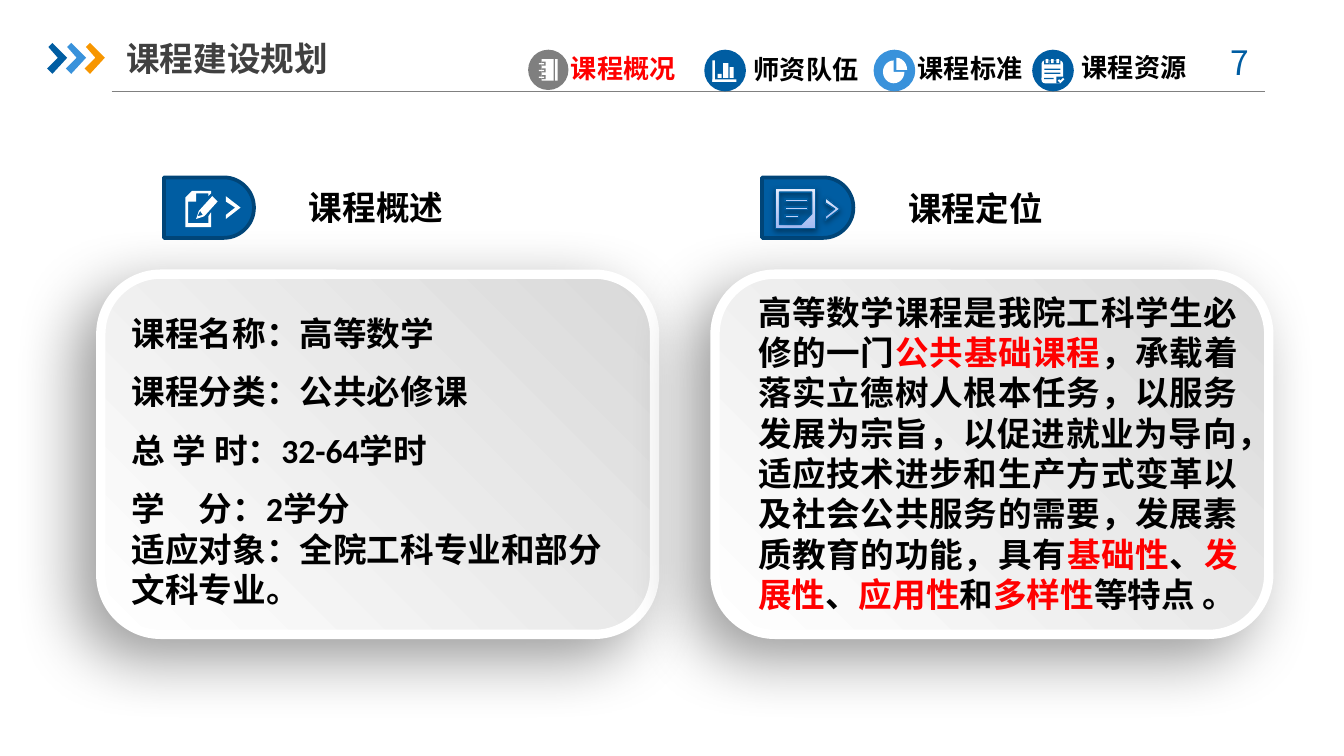
from math import cos, radians, sin

from lxml.etree import SubElement
from pptx import Presentation
from pptx.dml.color import RGBColor
from pptx.enum.lang import MSO_LANGUAGE_ID
from pptx.enum.shapes import MSO_CONNECTOR, MSO_SHAPE
from pptx.enum.text import MSO_ANCHOR, MSO_AUTO_SIZE, PP_ALIGN
from pptx.oxml.ns import qn
from pptx.util import Pt

PX = 9144  # 100 px to the inch
NAVY, BLUE, ORANGE, GREY = "005DA2", "3992DB", "F79600", "7F7F7F"
WHITE, BLACK, RED = "FFFFFF", "000000", "FF0000"
PAPER = ("D9D9D9", WHITE, 225)
ICE = ("A2BAF2", "E6ECFC", 90)
HEADING_FONT, BODY_FONT = "Noto Sans CJK SC", "Calibri"


def color(value):
    return RGBColor.from_string(value)


def px(*values):
    return [round(value * PX) for value in values]


class SlideBuilder:
    def __init__(self, slide):
        self.slide = slide
        self.shapes = slide.shapes

    def paint(self, shape, fill, line=None, width=1, shadow=None):
        """Fill is a hex string or (start, end, angle); shadow is (blur, distance, angle, opacity)."""
        shape.shadow.inherit = False
        if isinstance(fill, tuple):
            shape.fill.gradient()
            shape.fill.gradient_angle = fill[2]
            for stop, value, position in zip(shape.fill.gradient_stops, fill, (0, 1)):
                stop.color.rgb = color(value)
                stop.position = position
        else:
            shape.fill.solid()
            shape.fill.fore_color.rgb = color(fill)
        if line:
            shape.line.color.rgb = color(line)
            shape.line.width = Pt(width)
        else:
            shape.line.fill.background()
        if shadow:
            blur, distance, angle, opacity = shadow
            effects = shape._element.spPr.find(qn("a:effectLst"))
            outer = SubElement(effects, qn("a:outerShdw"), blurRad=str(Pt(blur)),
                               dist=str(Pt(distance)), dir=str(angle * 60000),
                               algn="ctr", rotWithShape="0")
            black = SubElement(outer, qn("a:srgbClr"), val=BLACK)
            SubElement(black, qn("a:alpha"), val=str(opacity * 1000))
        return shape

    def shape(self, kind, box, fill, **style):
        return self.paint(self.shapes.add_shape(kind, *px(*box)), fill, **style)

    def bars(self, boxes, fill, **style):
        for box in boxes:
            self.shape(MSO_SHAPE.RECTANGLE, box, fill, **style)

    def outline(self, contours, fill, left=0, top=0, **style):
        """Draw closed contours as one shape; an inner contour is a hole."""
        moved = [[px(left + x, top + y) for x, y in points] for points in contours]
        builder = self.shapes.build_freeform(*moved[0][0], scale=1.0)
        for index, points in enumerate(moved):
            if index:
                builder.move_to(*points[0])
            builder.add_line_segments(points[1:], close=True)
        return self.paint(builder.convert_to_shape(), fill, **style)

    def line(self, start, end, value, width):
        connector = self.shapes.add_connector(MSO_CONNECTOR.STRAIGHT, *px(*start, *end))
        connector.line.color.rgb = color(value)
        connector.line.width = Pt(width)
        SubElement(connector._element.spPr, qn("a:effectLst"))

    def format(self, paragraph, font, size, value, bold=True):
        for run in paragraph.runs:
            run.font.name, run.font.size, run.font.bold = font, Pt(size), bold
            run.font.color.rgb = color(value)
            run.font.language_id = MSO_LANGUAGE_ID.SIMPLIFIED_CHINESE

    def text(self, words, box, font, size, value, wrap=True, bold=True, align=PP_ALIGN.LEFT):
        frame = self.shapes.add_textbox(*px(*box)).text_frame
        frame.text, frame.word_wrap = words, wrap
        frame.paragraphs[0].alignment = align
        self.format(frame.paragraphs[0], font, size, value, bold)

    def placeholder(self, index, box, anchor):
        """Move a placeholder in front of what is drawn so far."""
        holder = self.slide.placeholders[index]
        holder.left, holder.top, holder.width, holder.height = px(*box)
        self.shapes._spTree.append(holder._element)
        frame = holder.text_frame
        frame.auto_size, frame.vertical_anchor = MSO_AUTO_SIZE.NONE, anchor
        return frame

    def title(self, words, box):
        frame = self.placeholder(0, box, MSO_ANCHOR.MIDDLE)
        frame.margin_left = frame.margin_right = 0
        frame.text = words
        frame.paragraphs[0].alignment = PP_ALIGN.LEFT
        self.format(frame.paragraphs[0], HEADING_FONT, 18, "404040")

    def plain(self, paragraph, tab=None):
        """Take bullet and indent away and set an optional tab stop."""
        properties = paragraph._p.get_or_add_pPr()
        properties.set("marL", "0")
        properties.set("indent", "0")
        SubElement(properties, qn("a:buNone"))
        if tab:
            tabs = SubElement(properties, qn("a:tabLst"))
            SubElement(tabs, qn("a:tab"), pos=str(tab * PX), algn="l")
        paragraph.space_before = Pt(0)

    def facts(self, lines, box):
        frame = self.placeholder(1, box, MSO_ANCHOR.MIDDLE)
        frame.text = "\n".join(lines)
        for index, paragraph in enumerate(frame.paragraphs):
            self.plain(paragraph, tab=48)
            if index < len(lines) - 1:
                paragraph.line_spacing = 1.2
                paragraph.space_before = Pt(5.4 if index else 0)
            self.format(paragraph, BODY_FONT, 18, BLACK)

    def statement(self, pieces, box):
        """Pieces alternate between plain and highlighted words."""
        frame = self.placeholder(2, box, MSO_ANCHOR.TOP)
        paragraph = frame.paragraphs[0]
        self.plain(paragraph)
        paragraph.alignment = PP_ALIGN.JUSTIFY
        for piece in pieces:
            paragraph.add_run().text = piece
        self.format(paragraph, BODY_FONT, 18, BLACK)
        for run in paragraph.runs[1::2]:
            run.font.color.rgb = color(RED)

    def tag(self, left, width):
        """A blue label with a half-round right end."""
        radius = 22.5
        center = left + width - radius
        arc = [(center + radius * cos(radians(a)), 154.5 + radius * sin(radians(a)))
               for a in range(-90, 91, 6)]
        self.outline([[(left, 132), *arc, (left, 177)]], NAVY, line="004578", width=2)

    def notebook_icon(self):
        self.bars([(403, 44, 9, 16), (413, 44, 2, 16)], WHITE)
        for top in (47, 52, 57):
            self.bars([(403, top - 1, 3, 3)], GREY)
            self.bars([(401, top, 4, 1)], WHITE)

    def chart_icon(self):
        self.bars([(530, 45, 2, 16), (530, 59, 18, 2), (534, 55, 3, 3),
                   (538, 47, 4, 11), (543, 50, 3, 8)], WHITE)

    def pie_icon(self):
        self.shape(MSO_SHAPE.PIE, (657, 45, 16, 17), WHITE)
        quarter = self.shape(MSO_SHAPE.PIE, (659, 43, 16, 18), WHITE)
        quarter.adjustments[0], quarter.adjustments[1] = 162, 0

    def notepad_icon(self):
        self.shape(MSO_SHAPE.ROUNDED_RECTANGLE, (775, 45, 16, 17), WHITE)
        for left in (778, 782, 786):
            self.bars([(left - 1, 45, 4, 3)], NAVY)
            self.bars([(left, 44, 2, 3)], WHITE)
        self.bars([(777, 51, 12, 1), (777, 54, 12, 1), (777, 58, 7, 1), (786, 57, 6, 5)], NAVY)
        self.outline([[(787, 60), (788, 59), (789, 60), (791, 58), (792, 59), (789, 62)]], WHITE)


def main():
    presentation = Presentation()
    presentation.slide_width, presentation.slide_height = px(1000, 562.5)
    builder = SlideBuilder(presentation.slides.add_slide(presentation.slide_layouts[3]))

    builder.line((83, 68), (941, 68), "808080", 0.75)
    arrow = [(1, 3), (4, 0), (15, 11), (4, 23), (0, 19), (8, 11)]
    for index, fill in enumerate((NAVY, BLUE, ORANGE)):
        builder.outline([arrow], fill, left=35 + 14 * index, top=32)
    builder.title("课程建设规划", (94, 22, 438, 42))
    builder.text("7", (886, 26, 73, 40), HEADING_FONT, 18, NAVY, bold=False, align=PP_ALIGN.CENTER)

    navigation = [
        ("课程概况", 415, 34, RED, (393, 37, 30, 30), GREY, builder.notebook_icon),
        ("师资队伍", 551, 35, BLACK, (524, 37, 31, 31), NAVY, builder.chart_icon),
        ("课程标准", 673, 34, BLACK, (650, 37, 31, 31), BLUE, builder.pie_icon),
        ("课程资源", 795, 33, BLACK, (768, 37, 31, 31), NAVY, builder.notepad_icon),
    ]
    for label, left, top, value, circle, fill, draw_icon in navigation:
        builder.shape(MSO_SHAPE.OVAL, circle, fill)
        draw_icon()
        builder.text(label, (left, top, 99, 34), BODY_FONT, 14, value, wrap=False)

    for left in (75, 532):
        builder.shape(MSO_SHAPE.ROUNDED_RECTANGLE, (left, 204, 412, 268), PAPER,
                      line=WHITE, width=5, shadow=(35, 15, 135, 40))
    builder.facts(["课程名称：高等数学", "课程分类：公共必修课", "总 学 时：32-64学时",
                   "学\t分：2学分", "适应对象：全院工科专业和部分文科专业。"],
                  (88, 219, 386, 242))
    builder.statement(["高等数学课程是我院工科学生必修的一门", "公共基础课程",
                       "，承载着落实立德树人根本任务，以服务发展为宗旨，以促进就业为导向，"
                       "适应技术进步和生产方式变革以及社会公共服务的需要，发展素质教育的功能，具有",
                       "基础性", "、", "发展性", "、", "应用性", "和", "多样性", "等特点 。"],
                      (554, 212, 377, 252))

    chevron = [(0, 0), (11, 8.5), (0, 17), (0, 14), (7, 8.5), (0, 4)]
    builder.tag(122, 67)
    builder.outline([chevron], WHITE, left=168, top=146)
    builder.outline([[(155, 166), (140, 166), (140, 150), (146, 150), (146, 144), (155, 144),
                      (155, 146), (157, 144), (157, 142), (143, 142), (138, 147), (138, 169),
                      (157, 169), (157, 158), (155, 161)]], WHITE)
    builder.outline([[(148, 157), (146, 163), (152, 161), (162, 150), (158, 146)],
                     [(151, 160), (147, 161), (149, 157)]], WHITE)
    builder.text("课程概述", (220, 134, 175, 40), HEADING_FONT, 18, BLACK)

    ice_style = dict(line="005B9E", width=0.75, shadow=(3.1, 1.6, 90, 38))
    builder.tag(567, 68)
    builder.outline([chevron], ICE, left=614, top=147, **ice_style)
    builder.outline([[(577, 140), (577, 170), (607, 170), (607, 140)],
                     [(580, 143), (604, 143), (604, 159), (596, 167), (580, 167)]],
                    ICE, **ice_style)
    builder.bars([(584, 148, 17, 2), (584, 154, 17, 2), (584, 160, 10, 2)], ICE, **ice_style)
    builder.text("课程定位", (666, 135, 175, 40), HEADING_FONT, 18, BLACK)

    presentation.save("out.pptx")


if __name__ == "__main__":
    main()
